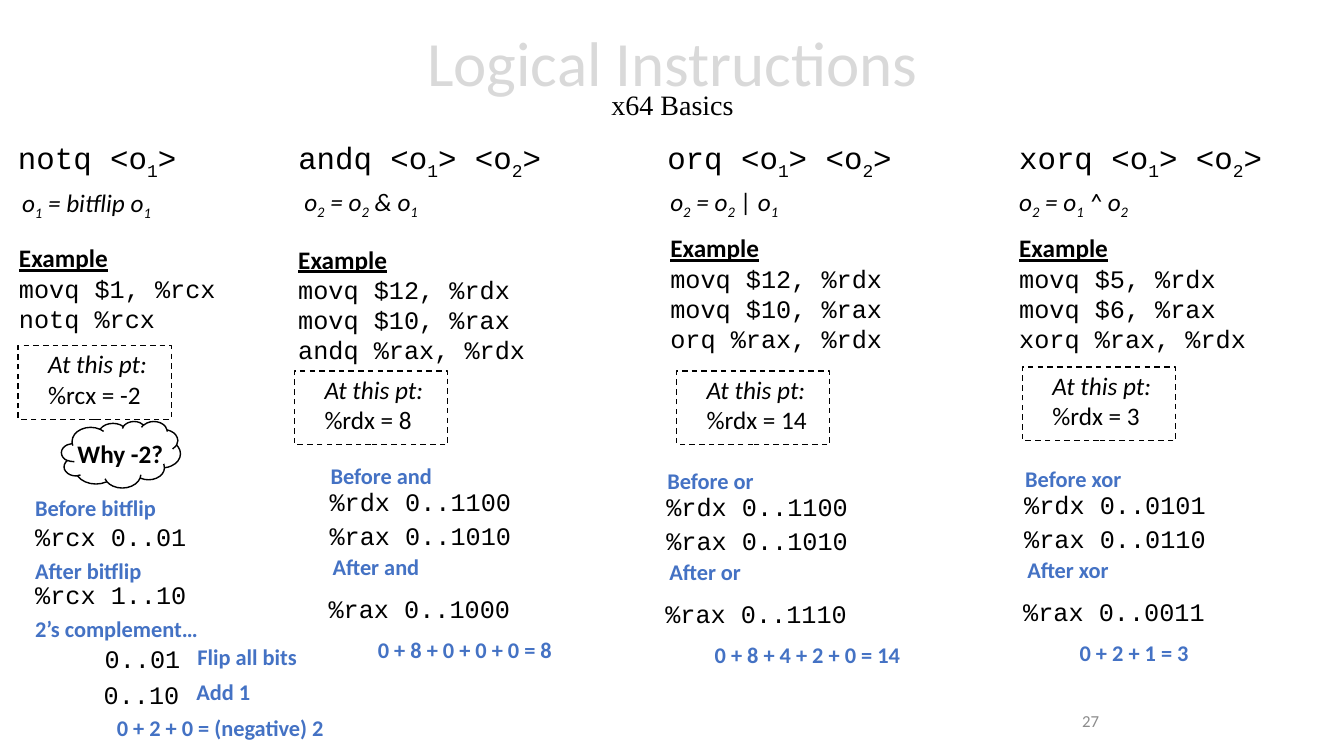
from pptx import Presentation
from pptx.dml.color import RGBColor
from pptx.enum.dml import MSO_LINE
from pptx.enum.shapes import MSO_SHAPE
from pptx.enum.text import MSO_ANCHOR, MSO_AUTO_SIZE, PP_ALIGN
from pptx.util import Inches, Pt

RECT, CLOUD = MSO_SHAPE.RECTANGLE, MSO_SHAPE.CLOUD
DASH = MSO_LINE.DASH
MIDDLE = MSO_ANCHOR.MIDDLE
CENTER, RIGHT = PP_ALIGN.CENTER, PP_ALIGN.RIGHT
NO_FIT = MSO_AUTO_SIZE.NONE
TITLE_ONLY = 5

SANS, MONO, SERIF = "Calibri", "Courier New", "Times New Roman"
BLACK, WHITE, BLUE = "000000", "FFFFFF", "4472C4"
LIGHT_GRAY, GRAY = "D9D9D9", "8C8C8C"

# In headings and formulas "_" puts the next character below the line.
# Places are (left, top) or (left, top, width) in inches.
INSTRUCTIONS = [
    dict(heading="notq <o_1>", heading_at=(0.08, 1.33, 1.81),
         formula="o_1 = bitflip o_1", formula_at=(0.12, 1.81, 1.59),
         code=["movq $1, %rcx", "notq %rcx"], code_at=(0.09, 2.36),
         state="%rcx = -2", state_at=(0.18, 3.43)),
    dict(heading="andq <o_1> <o_2>", heading_at=(2.86, 1.33, 2.68),
         formula="o_2 = o_2 & o_1", formula_at=(2.92, 1.8, 1.4),
         code=["movq $12, %rdx", "movq $10, %rax", "andq %rax, %rdx"],
         code_at=(2.86, 2.37), state="%rdx = 8", state_at=(2.92, 3.68)),
    dict(heading="orq <o_1> <o_2>", heading_at=(6.52, 1.33, 2.49),
         formula="o_2 = o_2 | o_1", formula_at=(6.55, 1.8, 1.34),
         code=["movq $12, %rdx", "movq $10, %rax", "orq %rax, %rdx"],
         code_at=(6.55, 2.26), state="%rdx = 14", state_at=(6.71, 3.68)),
    dict(heading="xorq <o_1> <o_2>", heading_at=(10.01, 1.33, 2.68),
         formula="o_2 = o_1 ^ o_2", formula_at=(10.01, 1.8, 1.35),
         code=["movq $5, %rdx", "movq $6, %rax", "xorq %rax, %rdx"],
         code_at=(10.01, 2.26), state="%rdx = 3", state_at=(10.14, 3.64)),
]

# name, left, top, rdx bits, rax bits, result bits, sum, sum offset
BIT_WORKINGS = [
    ("and", 3.18, 4.54, "1100", "1010", "1000", "0 + 8 + 0 + 0 + 0 = 8", 0.47),
    ("or", 6.52, 4.59, "1100", "1010", "1110", "0 + 8 + 4 + 2 + 0 = 14", 0.47),
    ("xor", 10.07, 4.57, "0101", "0110", "0011", "0 + 2 + 1 = 3", 0.54),
]

BITFLIP_LABELS = [
    ("Before bitflip", 0.25, 4.85, 1.42),
    ("After bitflip", 0.25, 5.48, 1.28),
    ("2’s complement…", 0.25, 6.05, 1.86),
    ("Flip all bits", 1.86, 6.33, 1.2),
    ("Add 1", 1.85, 6.68, 0.75),
    ("0 + 2 + 0 = (negative) 2", 1.06, 7.04, 2.28),
]
BITFLIP_VALUES = [
    ("%rcx 0..01", 0.25, 5.12),
    ("%rcx 1..10", 0.25, 5.7),
    ("0..01", 0.94, 6.33),
    ("0..10", 0.93, 6.69),
]


def rgb(color):
    return RGBColor.from_string(color)


def add_run(p, text, size=18, font=SANS, color=BLACK, bold=False,
            italic=False, underline=False, sub=False):
    r = p.add_run()
    r.text = text
    f = r.font
    f.size, f.name, f.bold, f.italic = Pt(size), font, bold, italic
    f.underline = underline
    f.color.rgb = rgb(color)
    if sub:
        f._element.set("baseline", "-25000")


def add_box(shapes, x, y, w, h, wrap=True):
    tf = shapes.add_textbox(Inches(x), Inches(y), Inches(w), Inches(h)).text_frame
    tf.word_wrap = wrap
    return tf


def add_subscripted(s, text, x, y, w, h, wrap=True, **style):
    p = add_box(s.shapes, x, y, w, h, wrap).paragraphs[0]
    first, *rest = text.split("_")
    add_run(p, first, **style)
    for part in rest:
        add_run(p, part[0], sub=True, **style)
        if part[1:]:
            add_run(p, part[1:], **style)


def mono_width(text):
    return 0.15 * len(text) + 0.21


def add_value(s, text, x, y):
    p = add_box(s.shapes, x, y, mono_width(text), 0.4).paragraphs[0]
    add_run(p, text, font=MONO)


def add_label(s, text, x, y, w):
    p = add_box(s.shapes, x, y, w, 0.37).paragraphs[0]
    add_run(p, text, size=16, color=BLUE, bold=True)


def add_outline(shapes, kind, x, y, w, h, line=BLACK, dash=None):
    sp = shapes.add_shape(kind, Inches(x), Inches(y), Inches(w), Inches(h))
    sp.shadow.inherit = False
    sp.fill.solid()
    sp.fill.fore_color.rgb = rgb(WHITE)
    sp.line.color.rgb = rgb(line)
    sp.line.width = Pt(1)
    if dash:
        sp.line.dash_style = dash


def add_title(s):
    sp = s.shapes.title
    sp.left, sp.top, sp.width, sp.height = (Inches(v) for v in (1.67, 0.09, 10, 1.45))
    tf = sp.text_frame
    tf.vertical_anchor = MIDDLE
    tf.auto_size = NO_FIT
    p = tf.paragraphs[0]
    p.alignment, p.line_spacing = CENTER, 0.7
    add_run(p, "Logical Instructions", size=45, color=LIGHT_GRAY)
    p.add_line_break()
    add_run(p, "x64 Basics", size=20, font=SERIF)


def add_instruction(s, heading, heading_at, formula, formula_at,
                    code, code_at, state, state_at):
    add_subscripted(s, heading, *heading_at, 0.47, wrap=False, size=22, font=MONO)
    add_subscripted(s, formula, *formula_at, 0.4, italic=True)
    # Example code
    width = max(mono_width(line) for line in code)
    tf = add_box(s.shapes, *code_at, width, 0.1 + 0.3 * (len(code) + 1))
    add_run(tf.paragraphs[0], "Example", bold=True, underline=True)
    for line in code:
        add_run(tf.add_paragraph(), line, font=MONO)
    # Register state
    x, y = state_at
    add_outline(s.shapes, RECT, x, y, 1.52, 0.73, dash=DASH)
    tf = add_box(s.shapes, x + 0.2, y - 0.02, 1.21, 0.71)
    add_run(tf.paragraphs[0], "At this pt:", italic=True)
    add_run(tf.add_paragraph(), state)


def add_bit_working(s, name, x, y, rdx, rax, result, total, total_dx):
    add_label(s, f"Before {name}", x, y, 1.22)
    add_value(s, f"%rdx 0..{rdx}", x - 0.01, y + 0.24)
    add_value(s, f"%rax 0..{rax}", x - 0.01, y + 0.57)
    add_label(s, f"After {name}", x + 0.02, y + 0.9, 1.08)
    add_value(s, f"%rax 0..{result}", x - 0.02, y + 1.3)
    add_label(s, total, x + total_dx, y + 1.72, 2.07)


def add_question(s):
    shapes = s.shapes.add_group_shape().shapes
    add_outline(shapes, CLOUD, 0.61, 4.18, 1.18, 0.66)
    add_outline(shapes, RECT, 1.03, 4.34, 0.59, 0.26, line=WHITE)
    p = add_box(shapes, 0.67, 4.3, 1.06, 0.4).paragraphs[0]
    add_run(p, "Why -2?", bold=True)


def add_slide_number(s):
    tf = add_box(s.shapes, 8, 6.95, 3, 0.4)
    tf.vertical_anchor = MIDDLE
    p = tf.paragraphs[0]
    p.alignment = RIGHT
    add_run(p, "27", size=12, color=GRAY)


def main():
    prs = Presentation()
    prs.slide_width, prs.slide_height = Inches(13.33), Inches(7.5)
    s = prs.slides.add_slide(prs.slide_layouts[TITLE_ONLY])
    add_title(s)
    for instruction in INSTRUCTIONS:
        add_instruction(s, **instruction)
    # Bit-level workings
    add_question(s)
    for label in BITFLIP_LABELS:
        add_label(s, *label)
    for value in BITFLIP_VALUES:
        add_value(s, *value)
    for working in BIT_WORKINGS:
        add_bit_working(s, *working)
    add_slide_number(s)
    prs.save("out.pptx")


if __name__ == "__main__":
    main()
